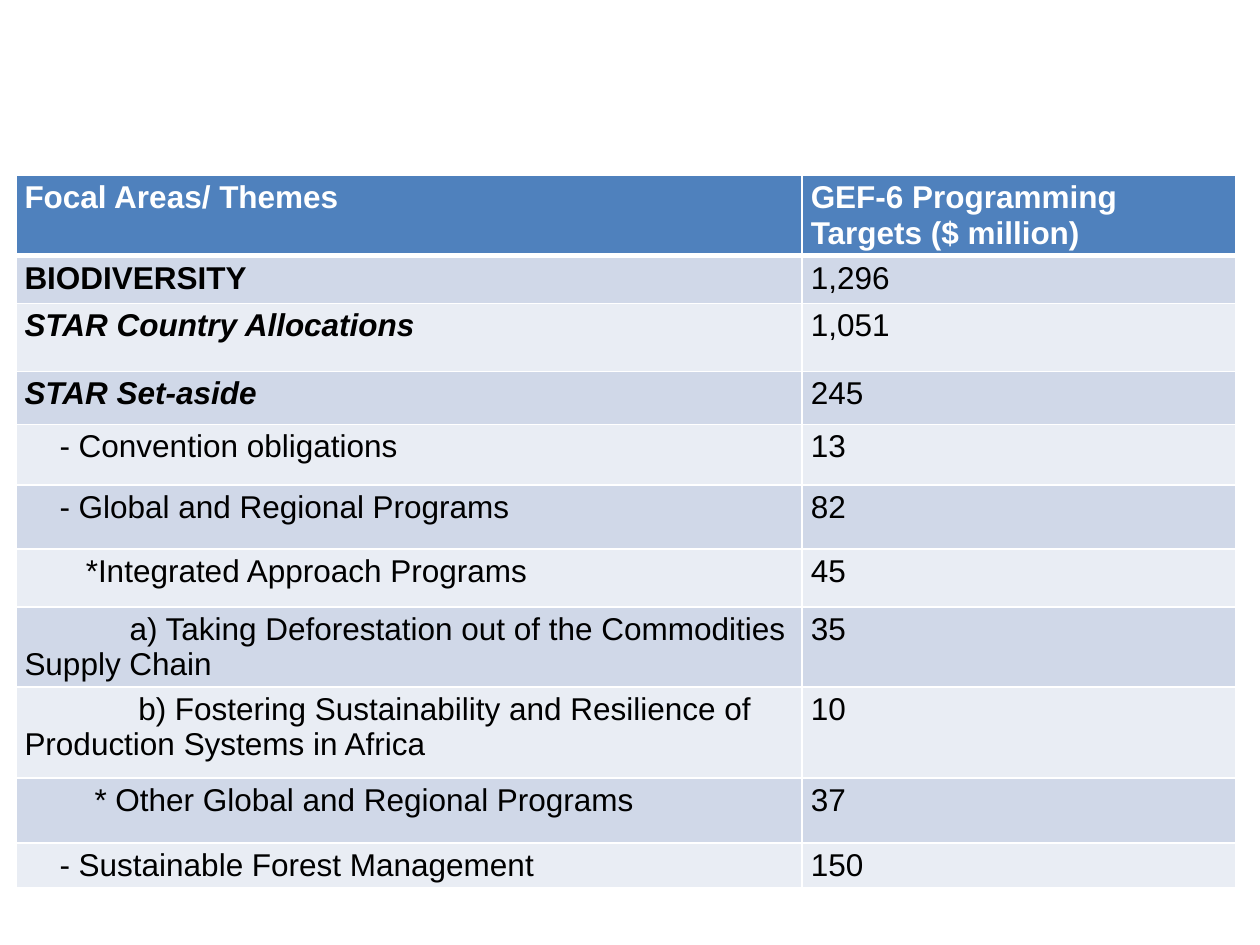
from lxml import etree
from pptx import Presentation
from pptx.dml.color import RGBColor
from pptx.oxml.ns import qn
from pptx.util import Pt

BLANK_LAYOUT = 6
COLORS = {
    "header": "4F81BD",
    "band_dark": "D0D8E8",
    "band_light": "E9EDF4",
    "white": "FFFFFF",
    "black": "000000",
}

HEADINGS = ("Focal Areas/ Themes", "GEF-6 Programming Targets ($ million)")
HEADER_HEIGHT = 39
COLUMN_WIDTHS = (449.3, 247.7)

# Theme, target, row height, first-line indent, bold, italic
TARGETS = [
    ("BIODIVERSITY", "1,296", 27.4, 0, True, False),
    ("STAR Country Allocations", "1,051", 38.9, 0, True, True),
    ("STAR Set-aside", "245", 30.2, 0, True, True),
    ("- Convention obligations", "13", 34.6, 20, False, False),
    ("- Global and Regional Programs", "82", 36.7, 20, False, False),
    ("*Integrated Approach Programs", "45", 33.1, 35, False, False),
    ("a) Taking Deforestation out of the Commodities Supply Chain",
     "35", 38.9, 60, False, False),
    ("b) Fostering Sustainability and Resilience of Production Systems in Africa",
     "10", 51.8, 65, False, False),
    ("* Other Global and Regional Programs", "37", 37.4, 40, False, False),
    ("- Sustainable Forest Management", "150", 22.3, 20, False, False),
]


class SlideBuilder:
    font_name = "Arial"
    font_size = 18

    def __init__(self, slide):
        self.slide = slide

    def table(self, left, top, widths, heights):
        frame = self.slide.shapes.add_table(
            len(heights), len(widths), Pt(left), Pt(top),
            Pt(sum(widths)), Pt(sum(heights)))
        table = frame.table
        for column, width in zip(table.columns, widths):
            column.width = Pt(width)
        for row, height in zip(table.rows, heights):
            row.height = Pt(height)
        return table

    def borders(self, cell, top, bottom):
        properties = cell._tc.get_or_add_tcPr()
        for side, width in (("L", 1), ("R", 1), ("T", top), ("B", bottom)):
            line = etree.SubElement(properties, qn(f"a:ln{side}"), w=str(Pt(width)))
            fill = etree.SubElement(line, qn("a:solidFill"))
            etree.SubElement(fill, qn("a:srgbClr"), val=COLORS["white"])

    def cell(self, cell, text, fill, color, bold=False, italic=False,
             indent=0, top=1, bottom=1):
        self.borders(cell, top, bottom)
        cell.fill.solid()
        cell.fill.fore_color.rgb = RGBColor.from_string(COLORS[fill])
        cell.margin_left = cell.margin_right = Pt(5)
        cell.margin_top = cell.margin_bottom = Pt(2.7)
        para = cell.text_frame.paragraphs[0]
        para.text = text
        if indent:
            para_properties = para._p.get_or_add_pPr()
            para_properties.set("marL", "0")
            para_properties.set("indent", str(Pt(indent)))
        font = para.runs[0].font
        font.name = self.font_name
        font.size = Pt(self.font_size)
        font.bold = bold
        font.italic = italic
        font.color.rgb = RGBColor.from_string(COLORS[color])


def main():
    deck = Presentation()
    deck.slide_width, deck.slide_height = Pt(720), Pt(540)
    builder = SlideBuilder(deck.slides.add_slide(deck.slide_layouts[BLANK_LAYOUT]))

    heights = [HEADER_HEIGHT] + [target[2] for target in TARGETS]
    table = builder.table(9, 100.4, COLUMN_WIDTHS, heights)

    # Header row, with a heavier rule below it
    for column, heading in enumerate(HEADINGS):
        builder.cell(table.cell(0, column), heading, "header", "white",
                     bold=True, bottom=3)

    # Banded body rows
    for row, (theme, amount, _, indent, bold, italic) in enumerate(TARGETS, start=1):
        fill = "band_dark" if row % 2 else "band_light"
        top = 3 if row == 1 else 1
        builder.cell(table.cell(row, 0), theme, fill, "black",
                     bold, italic, indent, top)
        builder.cell(table.cell(row, 1), amount, fill, "black", top=top)

    deck.save("out.pptx")


if __name__ == "__main__":
    main()
